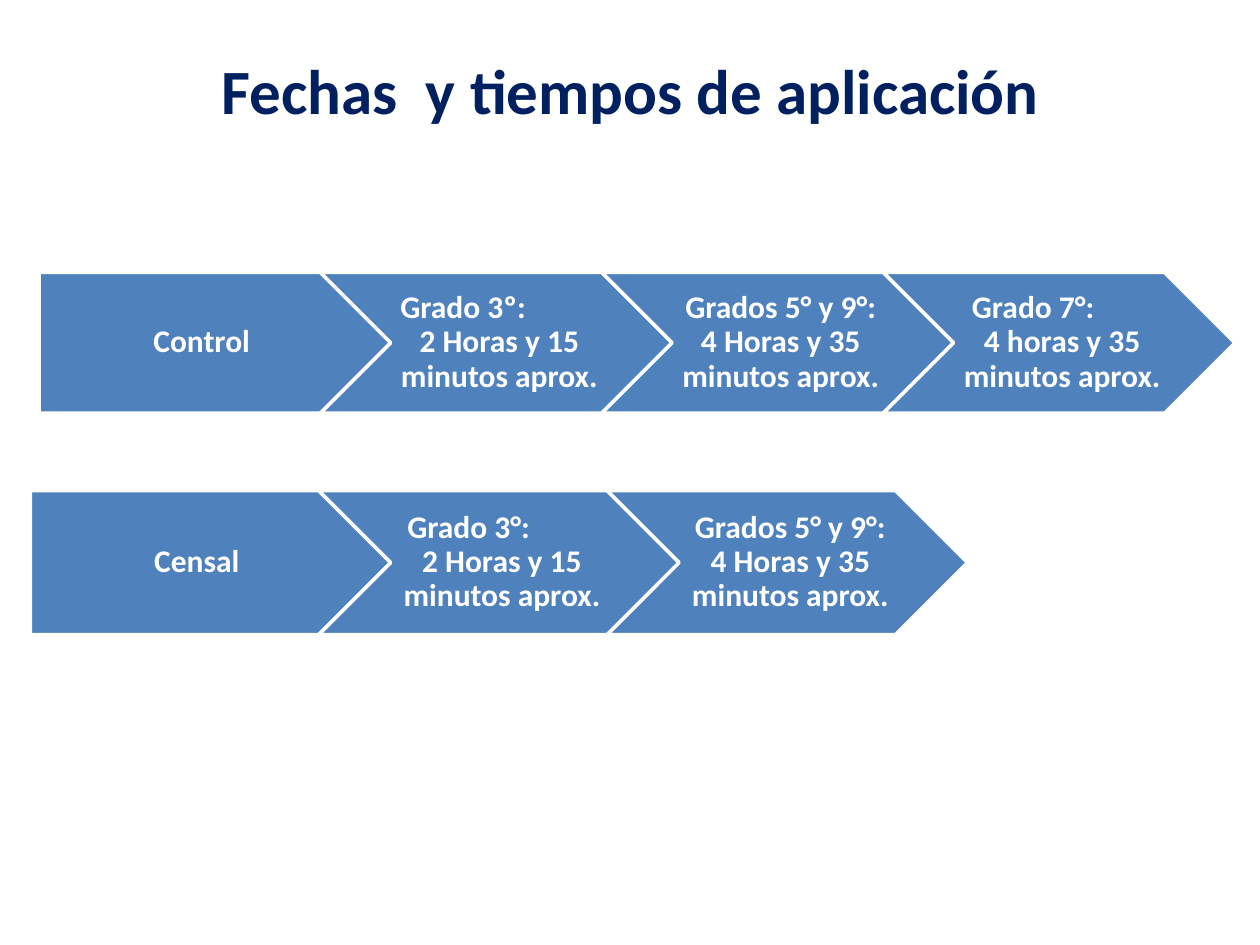
from pptx import Presentation
from pptx.dml.color import RGBColor
from pptx.enum.shapes import MSO_SHAPE as SHAPE
from pptx.enum.text import MSO_ANCHOR as ANCHOR, MSO_AUTO_SIZE as AUTO, PP_ALIGN as ALIGN
from pptx.util import Pt

COLORS = {"title": "002060", "arrow": "4F81BD", "light": "FFFFFF"}
FONT = "Calibri"
OVERLAP = 0.2
HEIGHT_RATIO = 0.4

ROWS = [
    (22.3, 155.7, 201, [
        ("Control",),
        ("Grado 3º:", "2 Horas y 15 minutos aprox.", 0),
        ("Grados 5° y 9°: 4 Horas y 35 minutos aprox.",),
        ("Grado 7°:", "4 horas y 35 minutos aprox.", 5),
    ]),
    (17.3, 280.3, 206, [
        ("Censal",),
        ("Grado 3°:", "2 Horas y 15 minutos aprox.", 4),
        ("Grados 5° y 9°: 4 Horas y 35 minutos aprox.",),
    ]),
]


def rgb(name):
    return RGBColor.from_string(COLORS[name])


def apply(target, values):
    for name, value in values.items():
        setattr(target, name, value)


def write(p, text, size, color, spacing, align=ALIGN.CENTER):
    apply(p, {"alignment": align, "line_spacing": spacing,
              "space_before": Pt(0), "space_after": Pt(0)})
    r = p.add_run()
    r.text = text
    apply(r.font, {"name": FONT, "size": Pt(size), "bold": True})
    r.font.color.rgb = rgb(color)


def add_title(s, text):
    sp = s.shapes.title
    apply(sp, {"left": Pt(116.6), "top": Pt(44.6), "width": Pt(487.4), "height": Pt(35.3)})
    tf = sp.text_frame
    apply(tf, {"word_wrap": False, "auto_size": AUTO.SHAPE_TO_FIT_TEXT,
               "vertical_anchor": ANCHOR.TOP})
    write(tf.paragraphs[0], text, 36, "title", Pt(24.6))


def add_arrow(group, kind, left, top, width, content):
    sp = group.shapes.add_shape(kind, Pt(left), Pt(top), Pt(width), Pt(width * HEIGHT_RATIO))
    sp.shadow.inherit = False
    sp.fill.solid()
    sp.fill.fore_color.rgb = rgb("arrow")
    sp.line.color.rgb = rgb("light")
    sp.line.width = Pt(2)
    tf = sp.text_frame
    apply(tf, {"word_wrap": True, "vertical_anchor": ANCHOR.MIDDLE,
               "margin_left": Pt(7 if kind == SHAPE.PENTAGON else 5.5),
               "margin_right": Pt(2), "margin_top": Pt(3.6), "margin_bottom": Pt(3.6)})
    p = tf.paragraphs[0]
    if len(content) == 1:
        write(p, content[0], 18, "light", 0.9)
    else:
        heading, body, indent = content
        p._p.get_or_add_pPr().set("marL", str(Pt(indent)))
        write(p, heading, 18, "light", 0.9, ALIGN.LEFT)
        write(tf.add_paragraph(), body, 18, "light", 0.9)


def add_row(s, left, top, width, contents):
    group = s.shapes.add_group_shape()
    step = width * (1 - OVERLAP)
    for i, content in enumerate(contents):
        kind = SHAPE.CHEVRON if i else SHAPE.PENTAGON
        add_arrow(group, kind, left + i * step, top, width, content)


def main():
    prs = Presentation()
    apply(prs, {"slide_width": Pt(720), "slide_height": Pt(540)})
    s = prs.slides.add_slide(prs.slide_layouts[5])
    add_title(s, "Fechas  y tiempos de aplicación")
    for row in ROWS:
        add_row(s, *row)
    prs.save("out.pptx")


if __name__ == "__main__":
    main()
